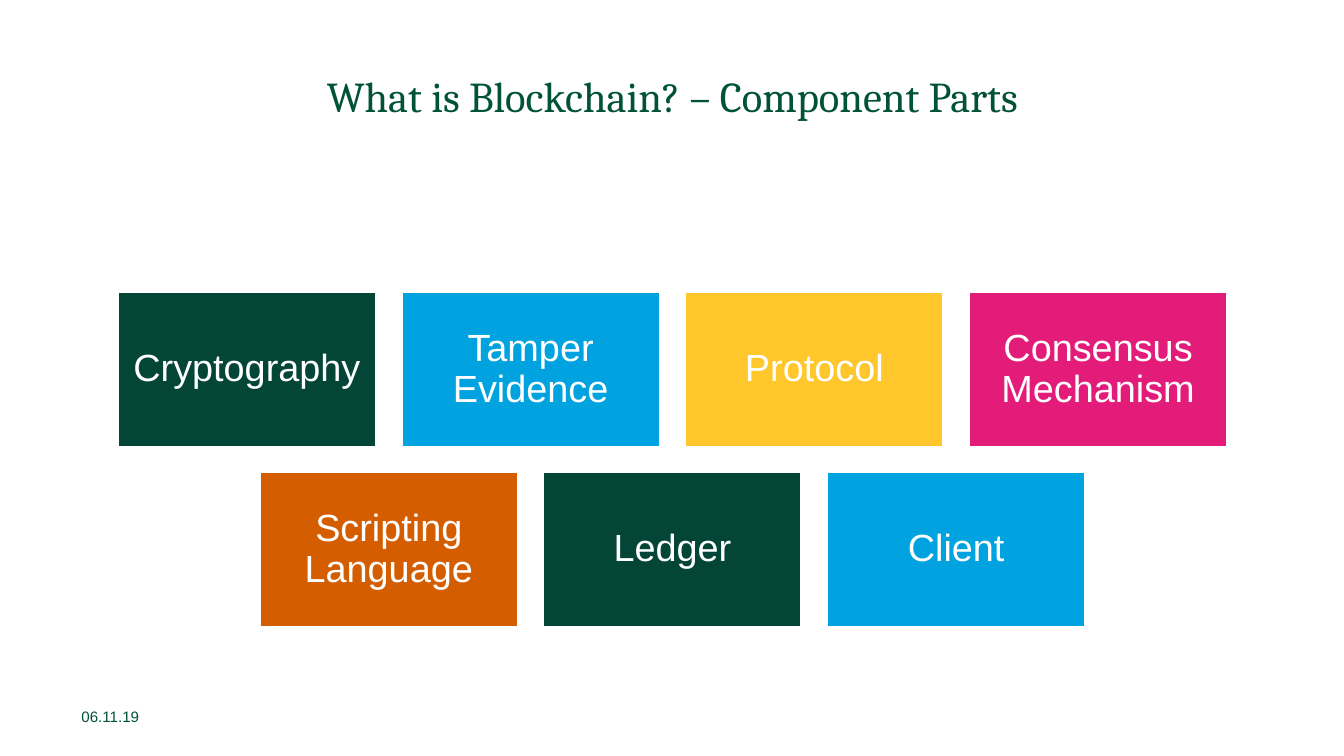
from itertools import cycle

from pptx import Presentation
from pptx import util as u
from pptx.dml.color import RGBColor
from pptx.enum import shapes, text

WHITE = RGBColor(0xFF, 0xFF, 0xFF)
GREEN = RGBColor(0x00, 0x53, 0x36)
PINE = RGBColor(0x03, 0x46, 0x38)
BLUE = RGBColor(0x00, 0xA3, 0xE0)
GOLD = RGBColor(0xFF, 0xC7, 0x2C)
PINK = RGBColor(0xE3, 0x1C, 0x79)
RUST = RGBColor(0xD4, 0x5D, 0x00)

ROWS = [
    ["Cryptography", "Tamper Evidence", "Protocol", "Consensus Mechanism"],
    ["Scripting Language", "Ledger", "Client"],
]


def write(frame, words, size, font, color, align, anchor):
    """Put one styled run into a text frame."""
    frame.word_wrap = True
    frame.vertical_anchor = anchor
    para = frame.paragraphs[0]
    para.alignment = align
    run = para.add_run()
    run.text = words
    run.font.size = u.Pt(size)
    run.font.name = font
    run.font.color.rgb = color
    return para


def title(slide, box, words):
    """Place the centred heading in its box."""
    frame = slide.shapes.add_textbox(*map(u.Inches, box)).text_frame
    para = write(frame, words, 30.4, "Cambria", GREEN,
                 text.PP_ALIGN.CENTER, text.MSO_ANCHOR.TOP)
    para.line_spacing = 0.9


def footer(slide, box, words):
    """Place the date in its box."""
    frame = slide.shapes.add_textbox(*map(u.Inches, box)).text_frame
    write(frame, words, 10.8, "Arial", GREEN,
          text.PP_ALIGN.LEFT, text.MSO_ANCHOR.MIDDLE)


def tile(slide, box, words, color):
    """Place one coloured block with its label."""
    rect = slide.shapes.add_shape(shapes.MSO_SHAPE.RECTANGLE, *map(u.Inches, box))
    rect.shadow.inherit = False
    rect.fill.solid()
    rect.fill.fore_color.rgb = color
    rect.line.color.rgb = WHITE
    rect.line.width = u.Pt(1.35)
    frame = rect.text_frame
    frame.margin_left = frame.margin_right = u.Inches(0.11)
    frame.margin_top = frame.margin_bottom = u.Inches(0.11)
    para = write(frame, words, 27, "Arial", WHITE,
                 text.PP_ALIGN.CENTER, text.MSO_ANCHOR.MIDDLE)
    para.line_spacing = 0.9


def grid(slide, box, rows):
    """Fill the box with centred rows of tiles, gaps a tenth of a tile."""
    left, top, width, height = box
    most = max(map(len, rows))
    wide = width / (most + 0.1 * (most - 1))
    gap = 0.1 * wide
    tall = (height - gap * (len(rows) - 1)) / len(rows)
    hues = cycle([PINE, BLUE, GOLD, PINK, RUST])
    for i, row in enumerate(rows):
        start = left + (most - len(row)) * (wide + gap) / 2
        for j, words in enumerate(row):
            spot = (start + j * (wide + gap), top + i * (tall + gap), wide, tall)
            tile(slide, spot, words, next(hues))


def main():
    """Build and save the slide."""
    deck = Presentation()
    deck.slide_width = u.Inches(13.33)
    deck.slide_height = u.Inches(7.5)
    slide = deck.slides.add_slide(deck.slide_layouts[6])
    footer(slide, (0.71, 6.91, 3, 0.4), "06.11.19")
    title(slide, (1.17, 0.7, 11, 1.5), "What is Blockchain? – Component Parts")
    grid(slide, (1.17, 2.9, 11, 3.32), ROWS)
    deck.save("out.pptx")


if __name__ == "__main__":
    main()
